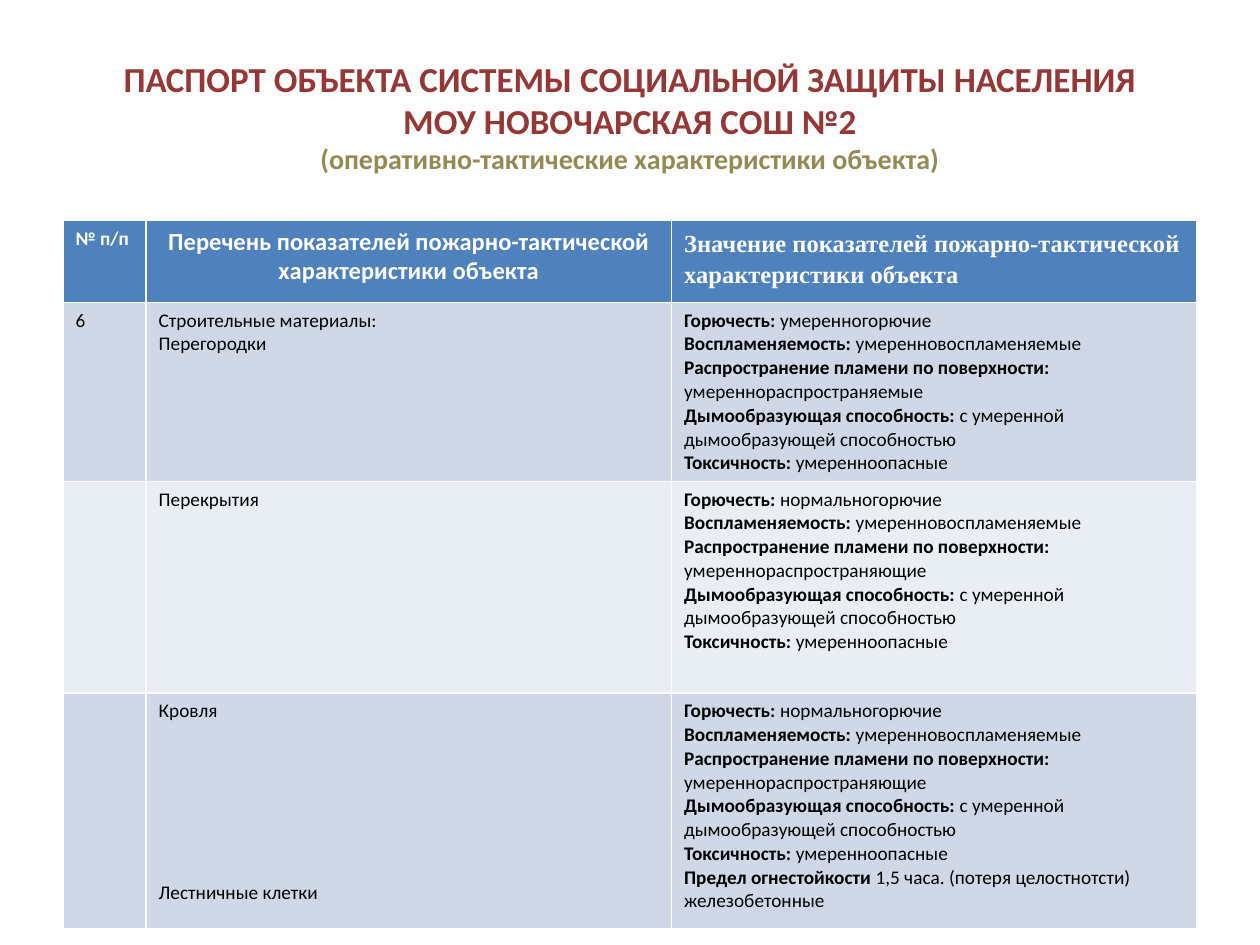
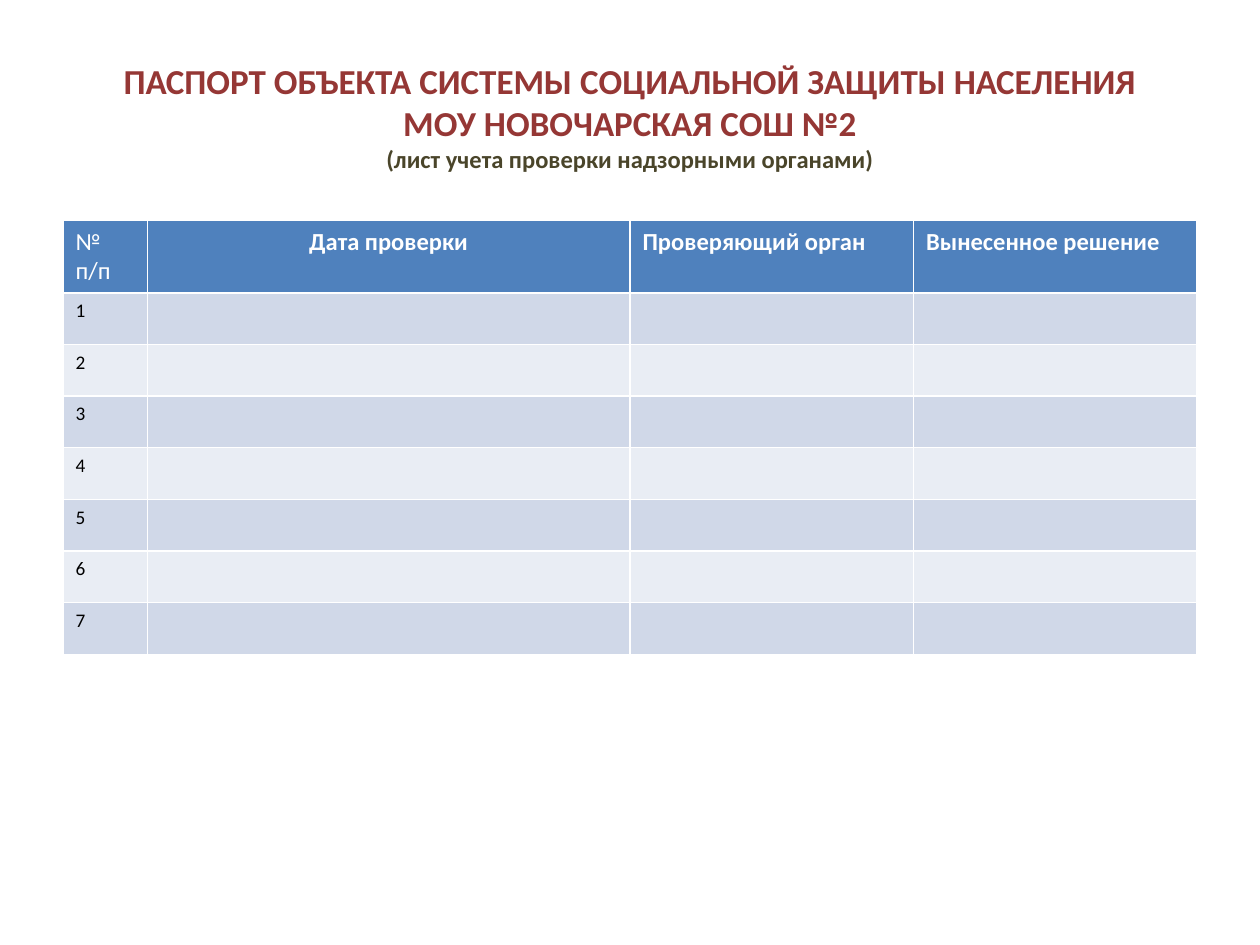
from copy import deepcopy
from dataclasses import dataclass

from pptx import Presentation
from pptx.dml.color import RGBColor as RGB
from pptx.enum.text import MSO_ANCHOR as Anchor, PP_ALIGN as Align
from pptx.util import Inches, Pt


@dataclass(frozen=True)
class Theme:
    font: str = "Calibri"
    serif: str = "Times New Roman"
    title: str = "953735"
    olive: str = "948A54"
    dark_olive: str = "4A452A"
    header: str = "4F81BD"
    bands: tuple = ("D0D8E8", "E9EDF4")
    white: str = "FFFFFF"
    black: str = "000000"
    title_size: int = 20
    subtitle_size: int = 16
    head_size: int = 14
    body_size: int = 11


T = Theme()


def add_run(p, text, size, color, bold=False, font=T.font):
    r = p.add_run()
    r.text = text
    r.font.name = font
    r.font.size = Pt(size)
    r.font.bold = bold
    r.font.color.rgb = RGB.from_string(color)
    return r


def add_slide(prs, subtitle, size, color, widths, heights):
    s = prs.slides.add_slide(prs.slide_layouts[5])
    sp = s.shapes.title
    sp.left, sp.top, sp.width, sp.height = map(Inches, (0.5, 0.3, 9, 1.25))
    tf = sp.text_frame
    tf.vertical_anchor = Anchor.MIDDLE
    p = tf.paragraphs[0]
    p.alignment = Align.CENTER
    for line in TITLE:
        r = add_run(p, line, T.title_size, T.title, True)
        p.add_line_break()
        p._p[-1].append(deepcopy(r._r.rPr))
    add_run(p, subtitle, size, color, True)

    table = s.shapes.add_table(len(heights), len(widths), Inches(0.5), Inches(1.75),
                               Inches(9), Inches(sum(heights))).table
    for column, width in zip(table.columns, widths):
        column.width = Inches(width)
    for i, (row, height) in enumerate(zip(table.rows, heights)):
        row.height = Inches(height)
        for cell in row.cells:
            cell.fill.solid()
            fill = T.bands[(i - 1) % 2] if i else T.header
            cell.fill.fore_color.rgb = RGB.from_string(fill)
    return table


TITLE = ("ПАСПОРТ ОБЪЕКТА СИСТЕМЫ СОЦИАЛЬНОЙ ЗАЩИТЫ НАСЕЛЕНИЯ",
         "МОУ НОВОЧАРСКАЯ СОШ №2")

prs = Presentation()
prs.slide_width, prs.slide_height = Inches(10), Inches(7.5)

table = add_slide(prs, "(оперативно-тактические характеристики объекта)",
                  T.subtitle_size, T.olive,
                  (0.66, 4.17, 4.17), (0.65, 1.38, 1.68, 1.87))
heads = (
    ("№ п/п", T.body_size, T.font, Align.LEFT, 1),
    ("Перечень показателей пожарно-тактической характеристики объекта",
     T.head_size, T.font, Align.CENTER, 1),
    ("Значение показателей пожарно-тактической характеристики объекта",
     T.head_size, T.serif, Align.LEFT, 1.15),
)
for c, (text, size, font, align, spacing) in enumerate(heads):
    p = table.cell(0, c).text_frame.paragraphs[0]
    p.alignment = align
    p.line_spacing = spacing
    add_run(p, text, size, T.white, True, font)

materials = (
    ("6", ("Строительные материалы:", "Перегородки"), 0,
     "умеренногорючие", "умереннораспространяемые", ()),
    ("", ("Перекрытия",), 0,
     "нормальногорючие", "умереннораспространяющие", ()),
    ("", ("Кровля", "Лестничные клетки"), 90,
     "нормальногорючие", "умереннораспространяющие",
     (("Предел огнестойкости ", "1,5 часа. (потеря целостнотсти)"),
      ("", "железобетонные"))),
)
for i, (number, names, gap, burning, spreading, extra) in enumerate(materials, 1):
    values = (
        ("Горючесть: ", burning),
        ("Воспламеняемость: ", "умеренновоспламеняемые"),
        ("Распространение пламени по поверхности:", ""),
        ("", spreading),
        ("Дымообразующая способность: ", "с умеренной дымообразующей способностью"),
        ("Токсичность: ", "умеренноопасные"),
    ) + extra
    columns = ([("", number)], [("", name) for name in names], values)
    for c, lines in enumerate(columns):
        tf = table.cell(i, c).text_frame
        for k, (label, value) in enumerate(lines):
            p = tf.add_paragraph() if k else tf.paragraphs[0]
            if k and c == 1:
                p.space_before = Pt(gap)
            for text, bold in ((label, True), (value, False)):
                if text:
                    add_run(p, text, T.body_size, T.black, bold)

checks = 7
table = add_slide(prs, "(лист учета проверки надзорными органами)",
                  T.head_size, T.dark_olive,
                  (0.67, 3.83, 2.25, 2.25), (0.57,) + (0.41,) * checks)
heads = ("№ п/п", "Дата проверки", "Проверяющий орган", "Вынесенное решение")
for c, text in enumerate(heads):
    p = table.cell(0, c).text_frame.paragraphs[0]
    p.alignment = Align.CENTER if c == 1 else Align.LEFT
    add_run(p, text, T.head_size, T.white, c > 0)
for i in range(1, checks + 1):
    p = table.cell(i, 0).text_frame.paragraphs[0]
    add_run(p, str(i), T.body_size, T.black)

prs.save("out.pptx")
